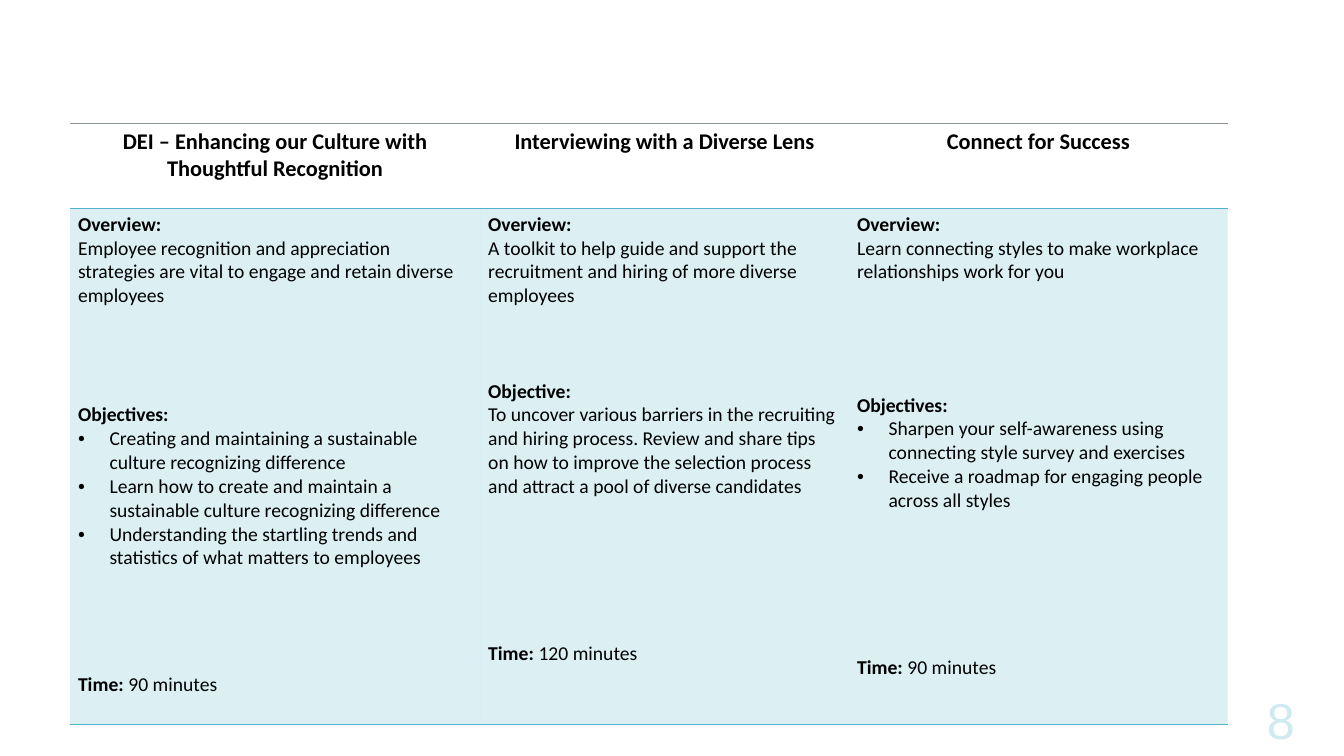
"""Build a slide with a table of three diversity workshops."""
from dataclasses import dataclass

from lxml.etree import SubElement
from pptx import Presentation
from pptx.dml.color import RGBColor
from pptx.enum.text import MSO_ANCHOR, PP_ALIGN as Align
from pptx.oxml import parse_xml
from pptx.oxml.ns import nsdecls, qn
from pptx.util import Pt

TEAL = "50B4C8"
GREY = "8C9496"
PALE = "CFEAF0"
BLACK = "000000"
NO_STYLE = "{2D5ABB26-0587-4C30-8999-92F81FD0307C}"


@dataclass(frozen=True)
class Workshop:
    title: str
    width: float
    overview: str
    goal_heading: str
    goals: tuple[str, ...]
    bulleted: bool
    minutes: int
    goal_gap: float
    time_gap: float


WORKSHOPS = (
    Workshop(
        "DEI – Enhancing our Culture with Thoughtful Recognition", 293,
        "Employee recognition and appreciation strategies are vital to engage "
        "and retain diverse employees",
        "Objectives:",
        ("Creating and maintaining a sustainable culture recognizing difference",
         "Learn how to create and maintain a sustainable culture recognizing difference",
         "Understanding the startling trends and statistics of what matters to employees"),
        True, 90, 68, 73.5),
    Workshop(
        "Interviewing with a Diverse Lens", 263.5,
        "A toolkit to help guide and support the recruitment and hiring of "
        "more diverse employees",
        "Objective:",
        ("To uncover various barriers in the recruiting and hiring process. "
         "Review and share tips on how to improve the selection process "
         "and attract a pool of diverse candidates",),
        False, 120, 51, 102),
    Workshop(
        "Connect for Success", 270.5,
        "Learn connecting styles to make workplace relationships work for you",
        "Objectives:",
        ("Sharpen your self-awareness using connecting style survey and exercises",
         "Receive a roadmap for engaging people across all styles"),
        True, 90, 78, 102),
)


def rgb(value: str) -> RGBColor:
    return RGBColor.from_string(value)


def write(frame, text: str, *, bold_part: str = "", size: float = 14,
          font: str = "Calibri", color: str = BLACK, align=Align.LEFT,
          gap: float = 0, bullet: bool = False) -> None:
    first = frame.paragraphs[0]
    line = frame.add_paragraph() if first.runs else first
    line.alignment = align
    line.space_before = Pt(gap)
    for part, bold in ((bold_part, True), (text, False)):
        if part:
            run = line.add_run()
            run.text = part
            run.font.name, run.font.size, run.font.bold = font, Pt(size), bold
            run.font.color.rgb = rgb(color)
    if bullet:
        properties = line._p.get_or_add_pPr()
        properties.set("marL", str(Pt(22.5)))
        properties.set("indent", str(-Pt(22.5)))
        SubElement(properties, qn("a:buFont")).set("typeface", "Arial")
        SubElement(properties, qn("a:buChar")).set("char", "•")


def add_borders(cell, **colors: str) -> None:
    properties = cell._tc.get_or_add_tcPr()
    for position, (edge, color) in enumerate(colors.items()):
        properties.insert(position, parse_xml(
            f'<a:{edge} {nsdecls("a")} w="{Pt(1)}"><a:solidFill>'
            f'<a:srgbClr val="{color}"/></a:solidFill></a:{edge}>'))


def fill_header(cell, workshop: Workshop) -> None:
    cell.fill.background()
    add_borders(cell, lnT=GREY, lnB=TEAL)
    write(cell.text_frame, "", bold_part=workshop.title, size=16, align=Align.CENTER)


def fill_details(cell, workshop: Workshop) -> None:
    cell.fill.solid()
    cell.fill.fore_color.rgb = rgb(TEAL)
    tint = cell._tc.tcPr.find(f"{qn('a:solidFill')}/{qn('a:srgbClr')}")
    SubElement(tint, qn("a:alpha")).set("val", "20000")
    add_borders(cell, lnT=TEAL, lnB=TEAL)
    frame = cell.text_frame
    write(frame, "", bold_part="Overview:")
    write(frame, workshop.overview)
    write(frame, "", bold_part=workshop.goal_heading, gap=workshop.goal_gap)
    for goal in workshop.goals:
        write(frame, goal, bullet=workshop.bulleted)
    write(frame, f"{workshop.minutes} minutes", bold_part="Time: ", gap=workshop.time_gap)


def add_workshops(slide) -> None:
    header_height, details_height = 60.5, 368.5
    total_width = sum(workshop.width for workshop in WORKSHOPS)
    table = slide.shapes.add_table(
        2, len(WORKSHOPS), Pt(50), Pt(88.5),
        Pt(total_width), Pt(header_height + details_height)).table
    table.horz_banding = False
    table._tbl.tblPr.find(qn("a:tableStyleId")).text = NO_STYLE
    table.rows[0].height, table.rows[1].height = Pt(header_height), Pt(details_height)
    for column, workshop in enumerate(WORKSHOPS):
        table.columns[column].width = Pt(workshop.width)
        for row, fill_cell in enumerate((fill_header, fill_details)):
            cell = table.cell(row, column)
            cell.margin_left = cell.margin_right = Pt(5.75)
            cell.margin_top = cell.margin_bottom = Pt(2.9)
            fill_cell(cell, workshop)


def add_page_number(slide) -> None:
    page_number = slide.shapes.add_textbox(Pt(890), Pt(492), Pt(50), Pt(44)).text_frame
    page_number.word_wrap = True
    page_number.vertical_anchor = MSO_ANCHOR.MIDDLE
    page_number.margin_left = page_number.margin_right = 0
    page_number.margin_top = page_number.margin_bottom = 0
    write(page_number, "8", size=36, font="Arial", color=PALE, align=Align.CENTER)


def main() -> None:
    deck = Presentation()
    deck.slide_width, deck.slide_height = Pt(960), Pt(540)
    slide = deck.slides.add_slide(deck.slide_layouts[6])
    add_workshops(slide)
    add_page_number(slide)
    deck.save("out.pptx")


if __name__ == "__main__":
    main()
